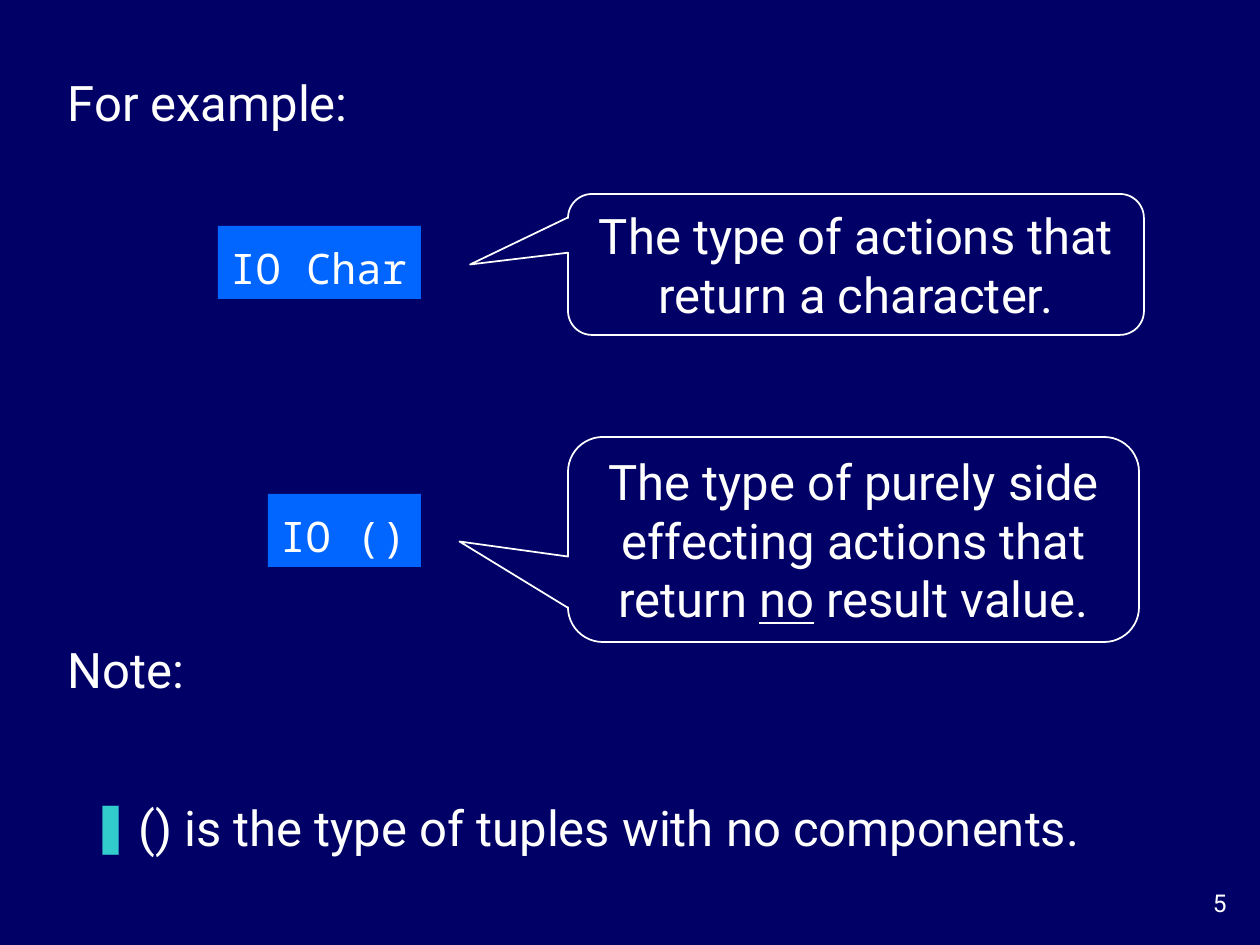
from dataclasses import dataclass

import lxml.etree
import pptx
import pptx.dml.color
import pptx.enum.shapes
import pptx.enum.text
import pptx.oxml.ns
import pptx.util

PX = 914400 / 126
COLORS = {"background": "000066", "text": "FFFFFF", "code": "0066FF", "bullet": "33CCCC"}
SANS, MONO = "Roboto", "Noto Sans Mono"
ALIGN = pptx.enum.text.PP_ALIGN
ANCHOR = pptx.enum.text.MSO_ANCHOR
AUTO_SIZE = pptx.enum.text.MSO_AUTO_SIZE
SHAPE = pptx.enum.shapes.MSO_SHAPE


@dataclass
class Box:
    left: int
    top: int
    width: int
    height: int

    def emu(self) -> list[int]:
        return [round(n * PX) for n in (self.left, self.top, self.width, self.height)]


@dataclass
class TypeExample:
    code: str
    code_box: Box
    meaning: list[str]  # every second piece is underlined
    meaning_box: Box
    adjustments: tuple[float, float, float]


EXAMPLES = [
    TypeExample("IO Char", Box(218, 226, 203, 73),
                ["The type of actions that return a character."],
                Box(568, 194, 576, 141), (-0.67, 0, 0.17)),
    TypeExample("IO ()", Box(268, 494, 153, 73),
                ["The type of purely side effecting actions that return ", "no", " result value."],
                Box(568, 437, 571, 205), (-0.69, 0.01, 0.17)),
]


def rgb(name: str) -> pptx.dml.color.RGBColor:
    return pptx.dml.color.RGBColor.from_string(COLORS[name])


def place(shape, box: Box) -> None:
    shape.left, shape.top, shape.width, shape.height = box.emu()


def write(shape, pieces: list[str], size: int = 28, font: str = SANS, align=ALIGN.LEFT,
          anchor=ANCHOR.MIDDLE, wrap: bool = False):
    """Fill a shape with one paragraph and return that paragraph."""
    frame = shape.text_frame
    frame.auto_size = AUTO_SIZE.NONE
    frame.word_wrap = wrap
    frame.vertical_anchor = anchor
    paragraph = frame.paragraphs[0]
    paragraph.alignment = align
    for number, piece in enumerate(pieces):
        run = paragraph.add_run()
        run.text = piece
        run.font.name = font
        run.font.size = pptx.util.Pt(size)
        run.font.color.rgb = rgb("text")
        if number % 2:
            run.font.underline = True
    return paragraph


def add_bullet(paragraph, mark: str, color: str, indent: int) -> None:
    properties = paragraph._p.get_or_add_pPr()
    properties.set("marL", str(round(indent * PX)))
    properties.set("indent", str(round(-indent * PX)))
    qn = pptx.oxml.ns.qn
    bullet_color = lxml.etree.SubElement(properties, qn("a:buClr"))
    lxml.etree.SubElement(bullet_color, qn("a:srgbClr"), val=COLORS[color])
    lxml.etree.SubElement(properties, qn("a:buChar"), char=mark)


def add_example(slide, example: TypeExample) -> None:
    code = slide.shapes.add_shape(SHAPE.RECTANGLE, *example.code_box.emu())
    code.shadow.inherit = False
    code.fill.solid()
    code.fill.fore_color.rgb = rgb("code")
    code.line.fill.background()
    write(code, [example.code], 24, MONO).line_spacing = 1.2

    callout = slide.shapes.add_shape(SHAPE.ROUNDED_RECTANGULAR_CALLOUT, *example.meaning_box.emu())
    callout.shadow.inherit = False
    callout.fill.background()
    callout.line.color.rgb = rgb("text")
    callout.line.width = pptx.util.Pt(1)
    for number, value in enumerate(example.adjustments):
        callout.adjustments[number] = value
    write(callout, example.meaning, align=ALIGN.CENTER, wrap=True)


def main() -> None:
    deck = pptx.Presentation()
    deck.slide_width, deck.slide_height = pptx.util.Inches(10), pptx.util.Inches(7.5)
    slide = deck.slides.add_slide(deck.slide_layouts[1])
    slide.background.fill.solid()
    slide.background.fill.fore_color.rgb = rgb("background")

    # Heading
    heading = slide.shapes.title
    place(heading, Box(55, 66, 309, 72))
    write(heading, ["For example:"])

    # Types with their meanings
    for example in EXAMPLES:
        add_example(slide, example)

    # Note
    note = slide.shapes.add_textbox(*Box(55, 633, 145, 72).emu())
    write(note, ["Note:"])
    remark = slide.placeholders[1]
    place(remark, Box(78, 791, 1042, 87))
    point = write(remark, ["() is the type of tuples with no components."],
                  anchor=ANCHOR.TOP, wrap=True)
    add_bullet(point, "❚", "bullet", 48)
    point.space_before = pptx.util.Pt(0)

    # Page number
    page_number = slide.shapes.add_textbox(*Box(1155, 882, 84, 42).emu())
    write(page_number, ["5"], 14, align=ALIGN.RIGHT, anchor=ANCHOR.TOP, wrap=True)

    deck.save("out.pptx")


if __name__ == "__main__":
    main()
